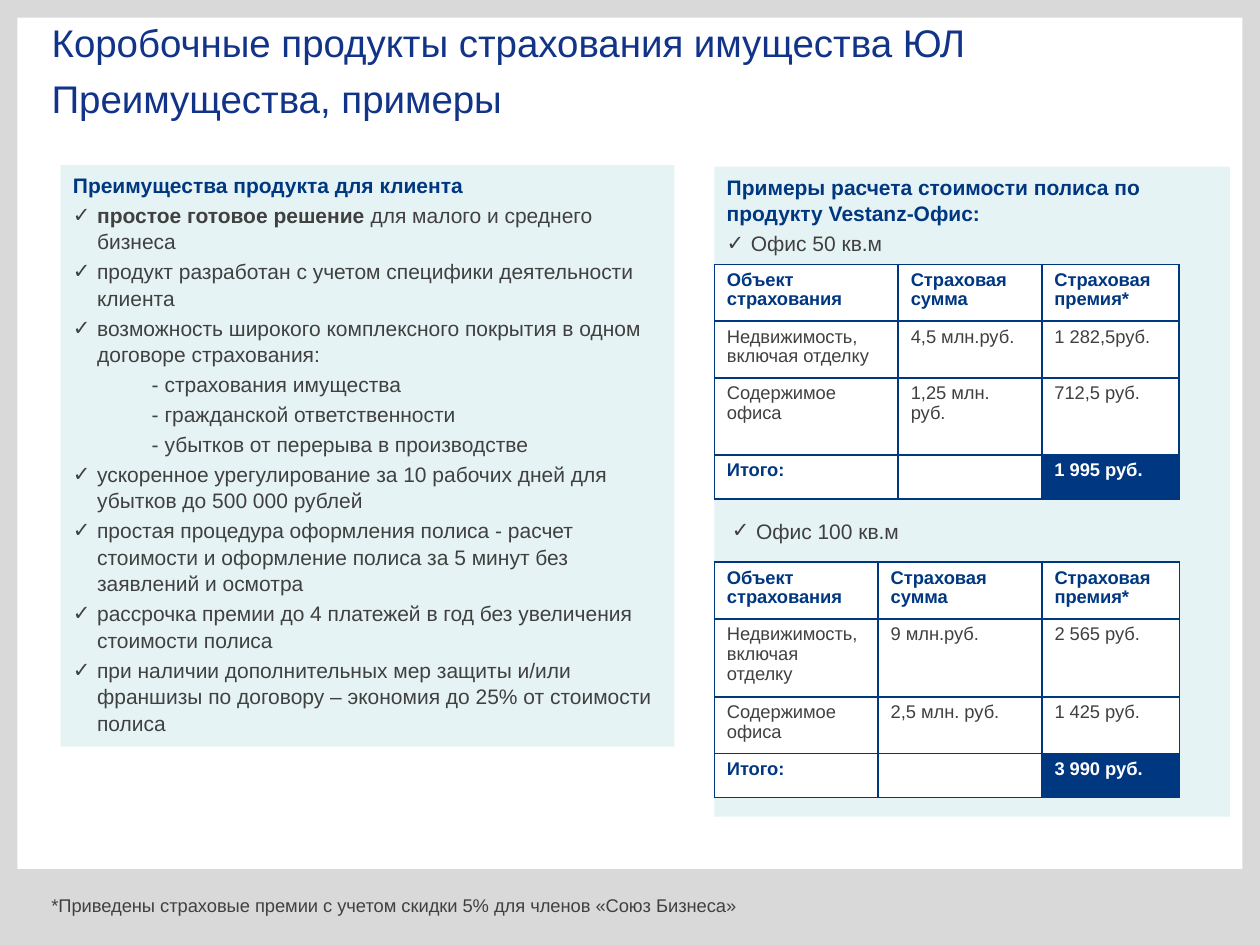
from pptx import Presentation
from pptx import util as u
from pptx.dml.color import RGBColor
from pptx.enum import shapes, text
from pptx.oxml import parse_xml
from pptx.oxml.ns import nsdecls, qn

Pt = u.Pt
HUES = {"frame": "D9D9D9", "page": "FFFFFF", "panel": "DAEDEF",
        "navy": "003781", "body": "404040", "title": "113388"}


class Deck:
    font = "Arial"

    def __init__(self, wide, high):
        self.prs = Presentation()
        self.prs.slide_width, self.prs.slide_height = Pt(wide), Pt(high)
        self.slide = self.prs.slides.add_slide(self.prs.slide_layouts[5])

    def hue(self, name):
        return RGBColor.from_string(HUES[name])

    def style(self, run, size, hue, bold=False):
        run.font.name, run.font.size, run.font.bold = self.font, Pt(size), bold
        run.font.color.rgb = self.hue(hue)

    def mark(self, para, left, hang, bullet):
        props = para._p.get_or_add_pPr()
        props.set("marL", str(Pt(left)))
        props.set("indent", str(-Pt(hang)))
        if bullet:
            props.append(parse_xml(f'<a:buFont {nsdecls("a")} typeface="Arial"/>'))
            props.append(parse_xml(f'<a:buChar {nsdecls("a")} char="✓"/>'))

    def fill_text(self, frame, items, size=12, gap=2, lead=1.05):
        """Items are (kind, words); words before a bar are bold."""
        frame.text = "\n".join(words.replace("|", "") for _, words in items)
        for i, (para, (kind, words)) in enumerate(zip(frame.paragraphs, items)):
            para.alignment = text.PP_ALIGN.LEFT
            para.line_spacing = lead
            para.space_before = Pt(gap if i else 0)
            if kind == "check":
                self.mark(para, 13.8, 13.8, True)
            elif kind == "dash":
                self.mark(para, 45, 0, False)
            if "|" in words:
                strong, plain = words.split("|")
                para.runs[0].text = strong
                para.add_run().text = plain
            for k, run in enumerate(para.runs):
                bold = kind == "head" or ("|" in words and k == 0)
                hue = {"head": "navy", "title": "title"}.get(kind, "body")
                self.style(run, size, hue, bold)

    def title(self, box, lines):
        shape = self.slide.shapes.title
        shape.left, shape.top, shape.width, shape.height = map(Pt, box)
        frame = shape.text_frame
        self.fill_text(frame, [("title", line) for line in lines], 22, 4.4)
        frame.auto_size = text.MSO_AUTO_SIZE.NONE
        frame.vertical_anchor = text.MSO_ANCHOR.MIDDLE
        self.slide.shapes._spTree.append(shape._element)

    def rect(self, box, hue, items=(), alpha=None):
        shape = self.slide.shapes.add_shape(
            shapes.MSO_SHAPE.RECTANGLE, *map(Pt, box))
        shape.shadow.inherit = False
        shape.line.fill.background()
        shape.fill.solid()
        shape.fill.fore_color.rgb = self.hue(hue)
        if alpha:
            color = shape._element.spPr.find(".//" + qn("a:srgbClr"))
            color.append(parse_xml(
                f'<a:alpha {nsdecls("a")} val="{alpha * 1000}"/>'))
        if items:
            frame = shape.text_frame
            frame.word_wrap = True
            frame.vertical_anchor = text.MSO_ANCHOR.TOP
            self.fill_text(frame, items)

    def label(self, box, kind, words, size, wrap=True):
        frame = self.slide.shapes.add_textbox(*map(Pt, box)).text_frame
        frame.word_wrap = wrap
        self.fill_text(frame, [(kind, words)], size, lead=1.0)

    def edge(self, cell):
        props = cell._tc.get_or_add_tcPr()
        for side in "LRTB":
            props.append(parse_xml(
                f'<a:ln{side} {nsdecls("a")} w="{Pt(1)}"><a:solidFill>'
                f'<a:srgbClr val="{HUES["navy"]}"/></a:solidFill></a:ln{side}>'))

    def table(self, left, top, cols, rows, data):
        grid = self.slide.shapes.add_table(
            len(rows), len(cols), Pt(left), Pt(top),
            Pt(sum(cols)), Pt(sum(rows))).table
        grid.first_row = grid.horz_banding = False
        for col, wide in zip(grid.columns, cols):
            col.width = Pt(wide)
        last = len(rows) - 1
        for r, line in enumerate(data):
            grid.rows[r].height = Pt(rows[r])
            for c, words in enumerate(line):
                cell = grid.cell(r, c)
                total = r == last and c == len(cols) - 1
                self.edge(cell)
                cell.fill.solid()
                cell.fill.fore_color.rgb = self.hue("navy" if total else "page")
                if not words:
                    cell.margin_top = cell.margin_bottom = 0
                    continue
                kind = "head" if r in (0, last) else "body"
                self.fill_text(cell.text_frame, [(kind, words)], 10.5, lead=0.96)
                if total:
                    self.style(cell.text_frame.paragraphs[0].runs[0],
                               10.5, "page", True)


def main():
    deck = Deck(720, 540)

    # Frame and page
    deck.rect((0, 0, 720, 540), "frame")
    deck.rect((10, 10, 700, 486.5), "page")

    # Benefits panel
    deck.rect((34.6, 94.3, 350.8, 332.3), "panel", [
        ("head", "Преимущества продукта для клиента"),
        ("check", "простое готовое решение |для малого и среднего бизнеса"),
        ("check", "продукт разработан с учетом специфики деятельности клиента"),
        ("check", "возможность широкого комплексного покрытия в одном "
                  "договоре страхования:"),
        ("dash", "- страхования имущества"),
        ("dash", "- гражданской ответственности"),
        ("dash", "- убытков от перерыва в производстве"),
        ("check", "ускоренное урегулирование за 10 рабочих дней для "
                  "убытков до 500 000 рублей"),
        ("check", "простая процедура оформления полиса - расчет стоимости и "
                  "оформление полиса за 5 минут без заявлений и осмотра"),
        ("check", "рассрочка премии до 4 платежей в год без увеличения "
                  "стоимости полиса"),
        ("check", "при наличии дополнительных мер защиты и/или франшизы по "
                  "договору – экономия до 25% от стоимости полиса"),
    ], 65)

    # Price examples panel
    deck.rect((408.2, 95.3, 294.6, 371.4), "panel", [
        ("head", "Примеры расчета стоимости полиса по продукту Vestanz-Офис:"),
        ("check", "Офис 50 кв.м"),
    ], 65)

    # Price tables
    heads = ["Объект страхования", "Страховая сумма", "Страховая премия*"]
    estate, goods = "Недвижимость, включая отделку", "Содержимое офиса"
    deck.table(408.2, 151, (105.1, 82.1, 78.5), (32.5, 32.5, 44, 25.2), [
        heads,
        [estate, "4,5 млн.руб.", "1 282,5руб."],
        [goods, "1,25 млн. руб.", "712,5 руб."],
        ["Итого:", "", "1 995 руб."]])
    deck.label((411.1, 292.5, 111.6, 21.6), "check", "Офис 100 кв.м", 12, False)
    deck.table(408.2, 321.2, (93.6, 93.6, 78.5), (32.5, 44.5, 32.5, 25.2), [
        heads,
        [estate, "9 млн.руб.", "2 565 руб."],
        [goods, "2,5 млн. руб.", "1 425 руб."],
        ["Итого:", "", "3 990 руб."]])

    # Footnote
    deck.label((22.3, 507.6, 489.6, 20.9), "body",
               "*Приведены страховые премии с учетом скидки 5% "
               "для членов «Союз Бизнеса»", 10.5)

    # Title
    deck.title((22.3, 14.4, 664.6, 50.4),
               ["Коробочные продукты страхования имущества ЮЛ",
                "Преимущества, примеры"])
    deck.prs.save("out.pptx")


if __name__ == "__main__":
    main()
